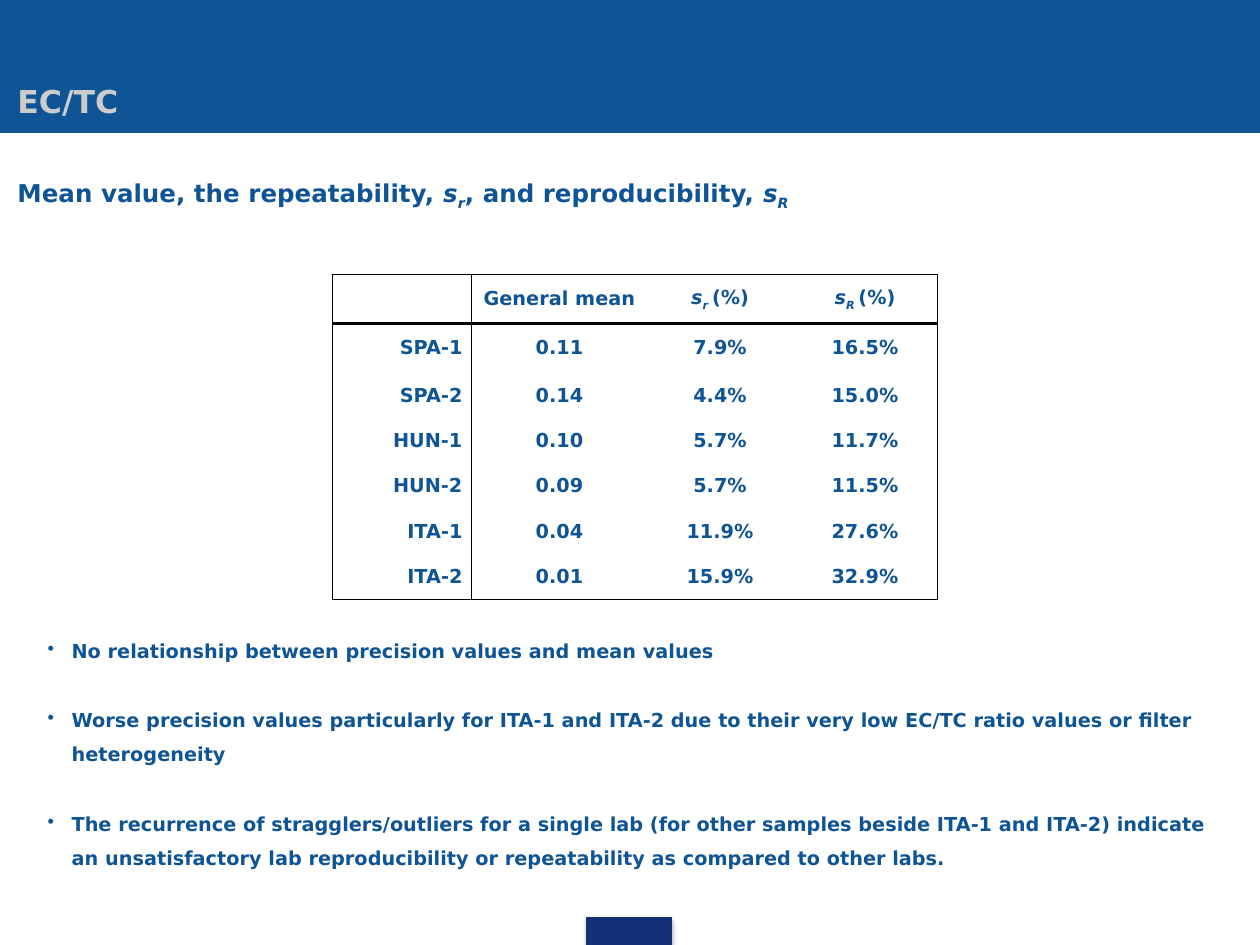
from lxml import etree
from pptx import Presentation
from pptx.dml.color import RGBColor
from pptx.enum.shapes import MSO_SHAPE
from pptx.enum.text import MSO_ANCHOR, MSO_AUTO_SIZE, PP_ALIGN
from pptx.oxml.ns import qn
from pptx.util import Inches, Pt

RECT = MSO_SHAPE.RECTANGLE
MIDDLE = MSO_ANCHOR.MIDDLE
GROW = MSO_AUTO_SIZE.SHAPE_TO_FIT_TEXT
CENTER, RIGHT = PP_ALIGN.CENTER, PP_ALIGN.RIGHT
FONT = "DejaVu Sans"
BLUE, NAVY, GREY, WHITE, BLACK = "0F5494", "133176", "CCCCCC", "FFFFFF", "000000"

# Text is a list of (words, style) pairs: "" plain, "i" italic, "sub" italic subscript
HEADING = [("Mean value, the repeatability, ", ""), ("s", "i"), ("r", "sub"),
           (", and reproducibility, ", ""), ("s", "i"), ("R", "sub")]
HEADER = [[], [("General mean", "")],
          [("s", "i"), ("r ", "sub"), ("(%)", "")],
          [("s", "i"), ("R ", "sub"), ("(%)", "")]]
RESULTS = [
    ("SPA-1", "0.11", "7.9%", "16.5%"),
    ("SPA-2", "0.14", "4.4%", "15.0%"),
    ("HUN-1", "0.10", "5.7%", "11.7%"),
    ("HUN-2", "0.09", "5.7%", "11.5%"),
    ("ITA-1", "0.04", "11.9%", "27.6%"),
    ("ITA-2", "0.01", "15.9%", "32.9%"),
]
NOTES = [
    "No relationship between precision values and mean values",
    "Worse precision values particularly for ITA-1 and ITA-2 due to their very low "
    "EC/TC ratio values or filter heterogeneity",
    "The recurrence of stragglers/outliers for a single lab (for other samples beside "
    "ITA-1 and ITA-2) indicate an unsatisfactory lab reproducibility or repeatability "
    "as compared to other labs.",
]


def rgb(code):
    return RGBColor.from_string(code)


def add_rect(slide, box, color):
    shape = slide.shapes.add_shape(RECT, *map(Inches, box))
    shape.shadow.inherit = False
    shape.fill.solid()
    shape.fill.fore_color.rgb = rgb(color)
    shape.line.color.rgb = rgb(color)
    shape.line.width = Pt(0.75)
    return shape


def add_shadow(shape):
    effects = shape._element.spPr.find(qn("a:effectLst"))
    shadow = etree.SubElement(effects, qn("a:outerShdw"), blurRad=str(Pt(3.1)),
                              dist=str(Pt(1.8)), dir="5400000", rotWithShape="0")
    color = etree.SubElement(shadow, qn("a:srgbClr"), val=BLACK)
    etree.SubElement(color, qn("a:alpha"), val="35000")


def add_text(slide, box, wrap=True):
    frame = slide.shapes.add_textbox(*map(Inches, box)).text_frame
    frame.word_wrap = wrap
    frame.auto_size = GROW
    return frame


def write(para, parts, size, color=BLUE):
    font = para.font
    font.name, font.size, font.bold = FONT, Pt(size), True
    font.color.rgb = rgb(color)
    for words, style in parts:
        run = para.add_run()
        run.text = words
        if style:
            run.font.italic = True
        if style == "sub":
            run.font._element.set("baseline", "-25000")


def add_bullet(para):
    props = para._p.get_or_add_pPr()
    props.set("marL", str(Inches(0.19)))
    props.set("indent", str(-Inches(0.19)))
    etree.SubElement(props, qn("a:buChar"), char="•")


def add_notes(slide, box):
    frame = add_text(slide, box)
    for i, note in enumerate(NOTES):
        para = frame.add_paragraph() if i else frame.paragraphs[0]
        add_bullet(para)
        para.line_spacing = 1.5
        if i:
            para.space_before = Pt(19.7)
        write(para, [(note, "")], 11)


def set_edges(cell, widths):
    """Draw left, right, top and bottom borders; a width of 0 means none."""
    props = cell._tc.get_or_add_tcPr()
    for side, width in zip("LRTB", widths):
        line = etree.SubElement(props, qn("a:ln" + side), w=str(Pt(width)))
        if width:
            fill = etree.SubElement(line, qn("a:solidFill"))
            etree.SubElement(fill, qn("a:srgbClr"), val=BLACK)
        else:
            etree.SubElement(line, qn("a:noFill"))


def add_table(slide, left, top, cols, rows):
    frame = slide.shapes.add_table(len(rows), len(cols), Inches(left), Inches(top),
                                   Inches(sum(cols)), Inches(sum(rows)))
    table = frame.table
    table.first_row = table.horz_banding = False
    for col, width in zip(table.columns, cols):
        col.width = Inches(width)
    for row, height in zip(table.rows, rows):
        row.height = Inches(height)
    body = [[[(value, "")] for value in result] for result in RESULTS]
    tops = [1, 2.25] + [0] * (len(rows) - 2)
    bottoms = tops[1:] + [1]
    for r, line in enumerate([HEADER] + body):
        for c, parts in enumerate(line):
            cell = table.cell(r, c)
            set_edges(cell, (int(c < 2), int(c in (0, 3)), tops[r], bottoms[r]))
            cell.fill.background()
            cell.vertical_anchor = MIDDLE
            cell.margin_left = cell.margin_right = Inches(0.07)
            cell.margin_top = cell.margin_bottom = 0
            para = cell.text_frame.paragraphs[0]
            para.alignment = CENTER if c else RIGHT
            write(para, parts, 11)


def main():
    deck = Presentation()
    deck.slide_width, deck.slide_height = Inches(10), Inches(7.5)
    slide = deck.slides.add_slide(deck.slide_layouts[6])

    add_rect(slide, (0, 0, 10, 1.05), BLUE)
    add_shadow(add_rect(slide, (4.66, 7.28, 0.67, 0.22), NAVY))
    title = add_text(slide, (0.04, 0.6, 1.08, 0.4), wrap=False)
    write(title.paragraphs[0], [("EC/TC", "")], 18, GREY)

    add_rect(slide, (0.04, 1.23, 9.98, 0.41), WHITE)
    heading = add_text(slide, (0.04, 1.23, 9.98, 0.41)).paragraphs[0]
    heading.line_spacing = 1.5
    write(heading, HEADING, 14)

    add_table(slide, 2.64, 2.18, [1.1, 1.4, 1.15, 1.15], [0.39] * 2 + [0.36] * 5)
    add_notes(slide, (0.28, 4.93, 9.45, 2.26))
    deck.save("out.pptx")


if __name__ == "__main__":
    main()
